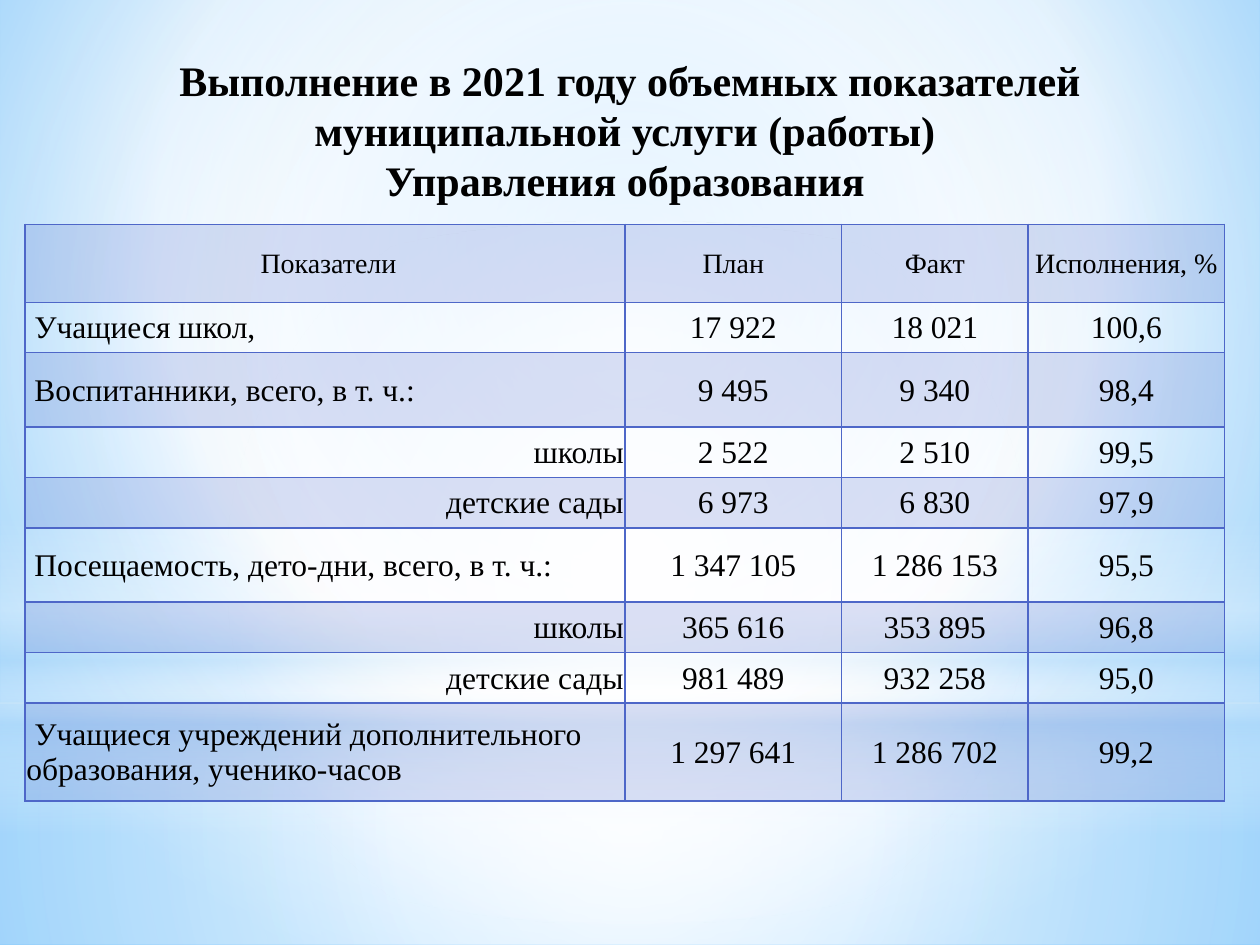
from lxml import etree
from pptx import Presentation
from pptx import util as u
from pptx.dml.color import RGBColor
from pptx.enum import shapes, text
from pptx.oxml import ns

BLACK = RGBColor(0x00, 0x00, 0x00)
WHITE = RGBColor(0xFF, 0xFF, 0xFF)
PALE = RGBColor(0xB4, 0xDC, 0xFA)
SKY = RGBColor(0x9E, 0xD5, 0xFF)
AZURE = RGBColor(0x5B, 0xB9, 0xFF)
INDIGO = RGBColor(0x4E, 0x67, 0xC8)

FONT = "Times New Roman"
CENTER, LEFT, RIGHT = text.PP_ALIGN.CENTER, text.PP_ALIGN.LEFT, text.PP_ALIGN.RIGHT
MIDDLE = text.MSO_ANCHOR.MIDDLE

TITLE = ("Выполнение в 2021 году объемных показателей муниципальной услуги "
         "(работы) \vУправления образования ")
COLUMNS = [4.76, 1.72, 1.48, 1.56]
ROWS = [  # height, label alignment, cells
    (0.62, CENTER, [" Показатели", "План", "Факт", "Исполнения, %"]),
    (0.4, LEFT, [" Учащиеся школ,", "17 922", "18 021", "100,6"]),
    (0.59, LEFT, [" Воспитанники, всего, в т. ч.:", "9 495", "9 340", "98,4"]),
    (0.4, RIGHT, ["школы", "2 522", "2 510", "99,5"]),
    (0.4, RIGHT, ["детские сады", "6 973", "6 830", "97,9"]),
    (0.59, LEFT, [" Посещаемость, дето-дни, всего, в т. ч.:",
                  "1 347 105", "1 286 153", "95,5"]),
    (0.4, RIGHT, ["школы", "365 616", "353 895", "96,8"]),
    (0.4, RIGHT, ["детские сады", "981 489", "932 258", "95,0"]),
    (0.78, LEFT, [" Учащиеся учреждений дополнительного образования, ученико-часов",
                  "1 297 641", "1 286 702", "99,2"]),
]


def add_node(parent, tag, **attributes):
    return etree.SubElement(parent, ns.qn(tag), {k: str(v) for k, v in attributes.items()})


def add_color(parent, color, opacity=100):
    node = add_node(parent, "a:srgbClr", val=color)
    if opacity < 100:
        add_node(node, "a:alpha", val=opacity * 1000)


def set_gradient(fill, stops, center=None, angle=90):
    """Fill with (position, colour, opacity) stops: round if center is given."""
    fill.gradient()
    gradient = fill._fill._gradFill
    for child in list(gradient):
        gradient.remove(child)
    stop_list = add_node(gradient, "a:gsLst")
    for position, color, opacity in stops:
        add_color(add_node(stop_list, "a:gs", pos=position * 1000), color, opacity)
    if center:
        round_path = add_node(gradient, "a:path", path="circle")
        sides = {side: value * 1000 for side, value in zip("ltrb", center)}
        add_node(round_path, "a:fillToRect", **sides)
    else:
        add_node(gradient, "a:lin", ang=angle * 60000, scaled=0)


def write_text(frame, words, size=18, bold=False, align=CENTER, color=BLACK):
    frame.text = words
    frame.word_wrap = True
    for para in frame.paragraphs:
        para.alignment = align
        for span in para.runs:
            span.font.name, span.font.size = FONT, u.Pt(size)
            span.font.bold, span.font.color.rgb = bold, color


class SlideBuilder:
    def __init__(self, slide):
        self.slide = slide
        self.line_color, self.line_width = INDIGO, u.Pt(1)
        self.band_color, self.band_opacity = INDIGO, 20

    def background(self, stops, center):
        set_gradient(self.slide.background.fill, stops, center)

    def glow(self, kind, top, height, stops, center=(50, 50, 50, 50)):
        shape = self.slide.shapes.add_shape(
            kind, 0, u.Inches(top), u.Inches(10), u.Inches(height))
        shape.shadow.inherit = False
        shape.line.fill.background()
        set_gradient(shape.fill, stops, center)

    def title(self, words, left, top, width, height):
        box = self.slide.shapes.title
        box.left, box.top = u.Inches(left), u.Inches(top)
        box.width, box.height = u.Inches(width), u.Inches(height)
        box.text_frame.vertical_anchor = MIDDLE
        write_text(box.text_frame, words, size=24, bold=True)
        self.slide.shapes._spTree.append(box._element)  # in front of the glows

    def table(self, left, top, columns, rows):
        frame = self.slide.shapes.add_table(
            len(rows), len(columns), u.Inches(left), u.Inches(top),
            u.Inches(sum(columns)), u.Inches(sum(row[0] for row in rows)))
        table = frame.table
        table.first_row = table.horz_banding = False
        for column, width in zip(table.columns, columns):
            column.width = u.Inches(width)
        for r, (height, label_align, words) in enumerate(rows):
            table.rows[r].height = u.Inches(height)
            for c, value in enumerate(words):
                cell = table.cell(r, c)
                self.format_cell(cell, banded=r % 2 == 0)
                write_text(cell.text_frame, value, size=18 if r else 16,
                           align=CENTER if c else label_align)

    def format_cell(self, cell, banded):
        cell.margin_left = cell.margin_right = cell.margin_top = u.Inches(0.01)
        cell.margin_bottom = 0
        cell.vertical_anchor = MIDDLE
        properties = cell._tc.get_or_add_tcPr()
        for side in ("a:lnL", "a:lnR", "a:lnT", "a:lnB"):
            line = add_node(properties, side, w=int(self.line_width))
            add_color(add_node(line, "a:solidFill"), self.line_color)
        if banded:
            add_color(add_node(properties, "a:solidFill"),
                      self.band_color, self.band_opacity)
        else:
            cell.fill.background()


def main():
    deck = Presentation()
    deck.slide_width, deck.slide_height = u.Inches(10), u.Inches(7.5)
    page = SlideBuilder(deck.slides.add_slide(deck.slide_layouts[5]))
    rectangle, oval = shapes.MSO_SHAPE.RECTANGLE, shapes.MSO_SHAPE.OVAL

    # Sky backdrop with soft glows
    page.background([(0, SKY, 100), (60, WHITE, 100), (100, AZURE, 100)], (20, 10, 20, 60))
    page.glow(rectangle, 5.58, 1.92, [(0, WHITE, 91), (37, WHITE, 76), (100, PALE, 79)])
    page.glow(rectangle, 0, 5.58, [(0, WHITE, 89), (48, WHITE, 62), (100, PALE, 79)])
    page.glow(rectangle, 4.12, 2.5,
              [(0, WHITE, 0), (29, WHITE, 30), (45, PALE, 40),
               (55, WHITE, 26), (65, PALE, 60), (100, WHITE, 0)], center=None)
    page.glow(oval, 1.75, 5.58, [(0, WHITE, 100), (56, WHITE, 0)])

    # Title and indicators
    page.title(TITLE, 0.5, 0.36, 9, 1.34)
    page.table(0.2, 1.78, COLUMNS, ROWS)

    deck.save("out.pptx")


if __name__ == "__main__":
    main()
